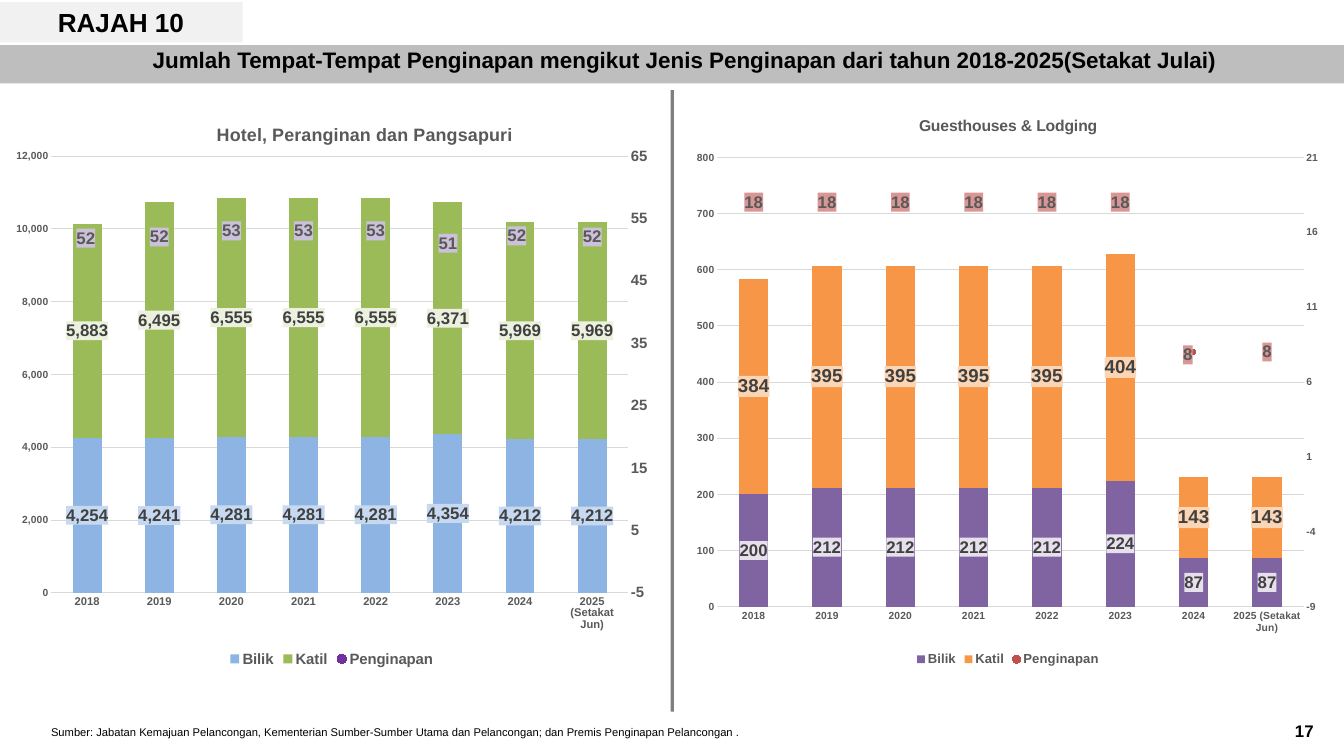
"""Build the slide on accommodation counts by type, 2018-2025."""
from copy import deepcopy

from lxml.etree import SubElement
from pptx import Presentation
from pptx.chart.axis import ValueAxis
from pptx.chart.data import CategoryChartData
from pptx.dml.color import RGBColor
from pptx.enum.chart import XL_CHART_TYPE as CT, XL_LABEL_POSITION as POS
from pptx.enum.chart import XL_LEGEND_POSITION as LEGEND, XL_MARKER_STYLE as MARKER
from pptx.enum.chart import XL_TICK_MARK as TICK
from pptx.enum.shapes import MSO_SHAPE as SHAPE
from pptx.enum.text import MSO_ANCHOR as ANCHOR, PP_ALIGN as ALIGN
from pptx.oxml import parse_xml
from pptx.oxml.ns import nsdecls, qn
from pptx.util import Inches, Pt

BLACK = RGBColor(0x00, 0x00, 0x00)
BAND = RGBColor(0xBE, 0xBE, 0xBE)
TAB = RGBColor(0xF1, 0xF1, 0xF1)
GREY = RGBColor(0x59, 0x59, 0x59)
DARK = RGBColor(0x40, 0x40, 0x40)
GRID = RGBColor(0xD9, 0xD9, 0xD9)
FONT = "Arial"

TITLE = "RAJAH 10"
HEADING = "Jumlah Tempat-Tempat Penginapan mengikut Jenis Penginapan dari tahun 2018-2025(Setakat Julai)"
SOURCE = ("Sumber: Jabatan Kemajuan Pelancongan, Kementerian Sumber-Sumber Utama dan Pelancongan; "
          "dan Premis Penginapan Pelancongan .")
YEARS = [str(year) for year in range(2018, 2025)] + ["2025 (Setakat Jun)"]

CHARTS = [
    dict(title="Hotel, Peranginan dan Pangsapuri", title_size=19.2, title_at=(0.32, 0.05),
         box=(0.05, 1.34, 9.77, 8.63), plot=(0.76, 2.32, 8.59, 6.5),
         cat_size=12, right_size=16, legend_size=16,
         left_axis=(0, 12000, 2000), right_axis=(-5, 65, 10),
         series=[("Bilik", [4254, 4241, 4281, 4281, 4281, 4354, 4212, 4212], "8EB4E3", "C6D9F1", 18),
                 ("Katil", [5883, 6495, 6555, 6555, 6555, 6371, 5969, 5969], "9BBB59", "EBF1DE", 18),
                 ("Penginapan", [52, 52, 53, 53, 53, 51, 52, 52], "7030A0", "CCC1DA", 18)],
         nudges={0: (-0.002, 0.002), 6: (-0.005, -0.002)}),
    dict(title="Guesthouses & Lodging", title_size=16.8, title_at=None,
         box=(10.19, 1.46, 9.62, 8.5), plot=(10.67, 2.34, 8.73, 6.69),
         cat_size=11, right_size=11, legend_size=14,
         left_axis=(0, 800, 100), right_axis=(-9, 21, 5),
         series=[("Bilik", [200, 212, 212, 212, 212, 224, 87, 87], "8064A2", "E6E0EC", 18),
                 ("Katil", [384, 395, 395, 395, 395, 404, 143, 143], "F79646", "FCD5B5", 20),
                 ("Penginapan", [18, 18, 18, 18, 18, 18, 8, 8], "C0504D", "D99694", 18)],
         nudges={6: (-0.009, 0.005)}),
]


def style(font, size, color=BLACK, bold=True):
    font.name, font.size, font.bold = FONT, Pt(size), bold
    font.color.rgb = color


def add_bar(slide, box, color):
    sp = slide.shapes.add_shape(SHAPE.RECTANGLE, *map(Inches, box))
    sp.shadow.inherit = False
    sp.fill.solid()
    sp.fill.fore_color.rgb = color
    sp.line.fill.background()
    return sp


def write(sp, text, size, box, bold=True, align=ALIGN.LEFT):
    sp.left, sp.top, sp.width, sp.height = map(Inches, box)
    tf = sp.text_frame
    tf.text = text
    tf.word_wrap = True
    tf.vertical_anchor = ANCHOR.TOP
    tf.margin_left = tf.margin_right = tf.margin_top = tf.margin_bottom = 0
    p = tf.paragraphs[0]
    p.alignment = align
    style(p.runs[0].font, size, bold=bold)


def layout_xml(**parts):
    items = "".join(f'<c:{tag} val="{value}"/>' for tag, value in parts.items())
    return parse_xml(f'<c:layout {nsdecls("c")}><c:manualLayout>{items}</c:manualLayout></c:layout>')


def drop(parent, tag):
    for old in parent.findall(qn(tag)):
        parent.remove(old)


def style_axis(axis, size, scale=None, fmt=None):
    axis.major_tick_mark = axis.minor_tick_mark = TICK.NONE
    style(axis.tick_labels.font, size, GREY)
    if scale:
        axis.minimum_scale, axis.maximum_scale, axis.major_unit = scale
        axis.tick_labels.number_format = fmt
        axis.tick_labels.number_format_is_linked = False
        axis.format.line.fill.background()


def split_right_axis(chart):
    plot_area = chart._chartSpace.chart.plotArea
    bar = plot_area.find(qn("c:barChart"))
    ser = bar.findall(qn("c:ser"))[-1]
    drop(ser, "c:invertIfNegative")
    line = parse_xml(f'<c:lineChart {nsdecls("c")}><c:grouping val="stacked"/><c:varyColors val="0"/>'
                     '<c:marker val="1"/><c:axId val="5001"/><c:axId val="5002"/></c:lineChart>')
    line.insert(2, ser)
    bar.addnext(line)
    last = plot_area.findall(qn("c:valAx"))[-1]
    for kind, own, other, hidden, side, crosses in (
            ("catAx", 5001, 5002, 1, "b", "autoZero"), ("valAx", 5002, 5001, 0, "r", "max")):
        last.addnext(parse_xml(
            f'<c:{kind} {nsdecls("c")}><c:axId val="{own}"/><c:scaling><c:orientation val="minMax"/>'
            f'</c:scaling><c:delete val="{hidden}"/><c:axPos val="{side}"/>'
            f'<c:tickLblPos val="nextTo"/><c:crossAx val="{other}"/><c:crosses val="{crosses}"/></c:{kind}>'))
    return ValueAxis(plot_area.findall(qn("c:valAx"))[-1])


def label_series(ser, size, color, back, fmt, nudges):
    labels = ser.data_labels
    labels.show_value = True
    labels.position = POS.CENTER
    labels.number_format, labels.number_format_is_linked = fmt, False
    style(labels.font, size, color)
    root = labels._element
    root.find(qn("c:txPr")).addprevious(parse_xml(
        f'<c:spPr {nsdecls("c", "a")}><a:solidFill><a:srgbClr val="{back}"/></a:solidFill></c:spPr>'))
    shared = [el for el in root if el.tag != qn("c:showLeaderLines")]
    for place, (idx, (dx, dy)) in enumerate(nudges.items()):
        label = parse_xml(f'<c:dLbl {nsdecls("c")}><c:idx val="{idx}"/></c:dLbl>')
        label.append(layout_xml(x=dx, y=dy))
        label.extend(deepcopy(shared))
        root.insert(place, label)


def add_combo(slide, spec):
    data = CategoryChartData()
    data.categories = YEARS
    for name, values, *_ in spec["series"]:
        data.add_series(name, values)
    box = spec["box"]
    chart = slide.shapes.add_chart(CT.COLUMN_STACKED, *map(Inches, box), data).chart
    style(chart.font, spec["legend_size"])
    chart.has_title = True
    tf = chart.chart_title.text_frame
    tf.text = spec["title"]
    style(tf.paragraphs[0].runs[0].font, spec["title_size"], GREY)
    chart.chart_title.include_in_layout = False
    if spec["title_at"]:
        title = chart.chart_title._element
        drop(title, "c:layout")
        x, y = spec["title_at"]
        title.find(qn("c:tx")).addnext(layout_xml(xMode="edge", yMode="edge", x=x, y=y))
    chart.has_legend = True
    chart.legend.position = LEGEND.BOTTOM
    chart.legend.include_in_layout = False
    style(chart.legend.font, spec["legend_size"], GREY)

    style_axis(chart.category_axis, spec["cat_size"])
    chart.category_axis.format.line.color.rgb = GRID
    style_axis(chart.value_axis, 11, spec["left_axis"], "#,##0")
    grid = chart.value_axis.major_gridlines.format.line
    grid.color.rgb, grid.width = GRID, Pt(0.75)
    style_axis(split_right_axis(chart), spec["right_size"], spec["right_axis"], "General")

    left, top, width, height = box
    x, y, w, h = spec["plot"]
    area = chart._chartSpace.chart.plotArea
    drop(area, "c:layout")
    area.insert(0, layout_xml(layoutTarget="inner", xMode="edge", yMode="edge",
                              x=round((x - left) / width, 4), y=round((y - top) / height, 4),
                              w=round(w / width, 4), h=round(h / height, 4)))

    bars, line = chart.plots
    bars.gap_width, bars.overlap, bars.vary_by_categories = 150, 100, False
    for ser, (_, _, fill, back, size) in zip(bars.series, spec["series"]):
        ser.format.fill.solid()
        ser.format.fill.fore_color.rgb = RGBColor.from_string(fill)
        label_series(ser, size, DARK, back, "#,##0", {})
    ser, (_, _, fill, back, size) = line.series[0], spec["series"][-1]
    ser.smooth = False
    ser.format.line.fill.background()
    ser.marker.style, ser.marker.size = MARKER.CIRCLE, 5
    ser.marker.format.fill.solid()
    ser.marker.format.fill.fore_color.rgb = RGBColor.from_string(fill)
    ser.marker.format.line.fill.background()
    label_series(ser, size, GREY, back, "General", spec["nudges"])


def main():
    prs = Presentation()
    prs.slide_width, prs.slide_height = Inches(20), Inches(11.25)
    slide = prs.slides.add_slide(prs.slide_layouts[5])
    add_bar(slide, (0, 0.67, 20, 0.57), BAND)
    add_bar(slide, (0, 0.03, 3.61, 0.6), TAB)
    title = slide.shapes.title
    slide.shapes._spTree.append(title._element)
    write(title, TITLE, 28, (0.86, 0.09, 2.2, 0.49))
    for text, size, box, bold, align in (
            (HEADING, 24, (1.6, 0.69, 17.17, 0.42), True, ALIGN.CENTER),
            ("17", 18, (19.27, 10.72, 0.44, 0.31), True, ALIGN.LEFT),
            (SOURCE, 12, (0.76, 10.79, 11, 0.21), False, ALIGN.LEFT)):
        write(slide.shapes.add_textbox(0, 0, 0, 0), text, size, box, bold, align)
    divider = add_bar(slide, (9.98, 1.34, 0.05, 9.25), BLACK)
    SubElement(divider._element.spPr.find(f'{qn("a:solidFill")}/{qn("a:srgbClr")}'),
               qn("a:alpha"), val="50000")
    for spec in CHARTS:
        add_combo(slide, spec)
    prs.save("out.pptx")


if __name__ == "__main__":
    main()
